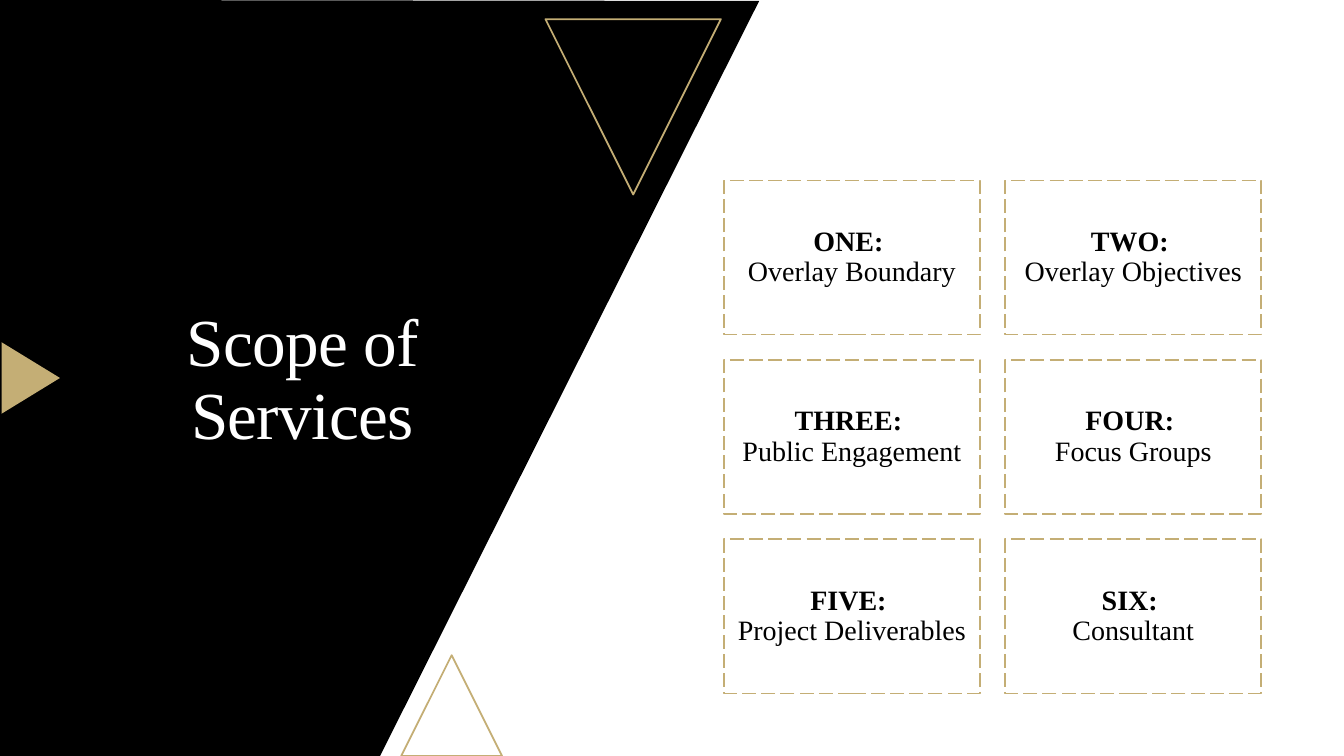
from dataclasses import dataclass

from pptx import Presentation
from pptx.dml.color import RGBColor
from pptx.enum.dml import MSO_LINE
from pptx.enum.shapes import MSO_SHAPE
from pptx.enum.text import MSO_ANCHOR, MSO_AUTO_SIZE, PP_ALIGN
from pptx.util import Emu, Pt

TRIANGLE = MSO_SHAPE.ISOSCELES_TRIANGLE
RECTANGLE = MSO_SHAPE.RECTANGLE
LONG_DASH = MSO_LINE.LONG_DASH
MIDDLE = MSO_ANCHOR.MIDDLE
CENTER = PP_ALIGN.CENTER
NO_AUTOFIT = MSO_AUTO_SIZE.NONE

PX = 9144  # 100 px to the inch
TITLE_ONLY = 5

SERVICES = [
    ("ONE: ", "Overlay Boundary"),
    ("TWO: ", "Overlay Objectives"),
    ("THREE: ", "Public Engagement"),
    ("FOUR: ", "Focus Groups"),
    ("FIVE: ", "Project Deliverables"),
    ("SIX: ", "Consultant"),
]


@dataclass(frozen=True)
class Theme:
    black: RGBColor = RGBColor(0x00, 0x00, 0x00)
    white: RGBColor = RGBColor(0xFF, 0xFF, 0xFF)
    gold: RGBColor = RGBColor(0xC4, 0xAE, 0x75)
    font: str = "Times New Roman"
    title_size: Pt = Pt(48)
    card_size: Pt = Pt(20)
    outline: Pt = Pt(1.25)


THEME = Theme()


def px(length):
    return Emu(length * PX)


def style_run(run, size, color, bold=False):
    run.font.name = THEME.font
    run.font.size = size
    run.font.color.rgb = color
    run.font.bold = bold


def set_margins(frame, margin):
    frame.margin_left = frame.margin_right = px(margin)
    frame.margin_top = frame.margin_bottom = px(margin)


def add_panel(slide, points):
    """Solid black panel with a slanted right edge."""
    builder = slide.shapes.build_freeform(*points[0], scale=PX)
    builder.add_line_segments(points[1:], close=True)
    panel = builder.convert_to_shape()
    panel.shadow.inherit = False
    panel.fill.solid()
    panel.fill.fore_color.rgb = THEME.black
    panel.line.fill.background()


def add_gold_shape(slide, kind, box, rotation=0, filled=False, dash=None):
    """Gold shape, either filled or outlined."""
    shape = slide.shapes.add_shape(kind, *map(px, box))
    shape.shadow.inherit = False
    shape.rotation = rotation
    if filled:
        shape.fill.solid()
        shape.fill.fore_color.rgb = THEME.gold
        shape.line.fill.background()
    else:
        shape.fill.background()
        shape.line.color.rgb = THEME.gold
        shape.line.width = THEME.outline
        shape.line.dash_style = dash
    return shape


def add_card(slide, box, number, service):
    """Dashed card with a bold number above the service."""
    card = add_gold_shape(slide, RECTANGLE, box, dash=LONG_DASH)
    frame = card.text_frame
    frame.word_wrap = True
    frame.vertical_anchor = MIDDLE
    set_margins(frame, 8)
    frame.text = f"{number}\v{service}"
    paragraph = frame.paragraphs[0]
    paragraph.alignment = CENTER
    paragraph.line_spacing = 0.9
    number_run, service_run = paragraph.runs
    style_run(number_run, THEME.card_size, THEME.black, bold=True)
    style_run(service_run, THEME.card_size, THEME.black)


def add_service_grid(slide):
    left, top, width, height = 718, 179, 254, 153
    column_step, row_step = 279, 178
    for index, (number, service) in enumerate(SERVICES):
        row, column = divmod(index, 2)
        box = (left + column * column_step, top + row * row_step, width, height)
        add_card(slide, box, number, service)


def place_title(slide, text, box):
    title = slide.shapes.title
    title.left, title.top, title.width, title.height = map(px, box)
    frame = title.text_frame
    frame.text = text
    frame.word_wrap = True
    frame.auto_size = NO_AUTOFIT
    frame.vertical_anchor = MIDDLE
    set_margins(frame, 20)
    paragraph = frame.paragraphs[0]
    paragraph.alignment = CENTER
    paragraph.line_spacing = 0.9
    run = paragraph.runs[0]
    style_run(run, THEME.title_size, THEME.white)
    run.font._element.set("spc", "-50")  # letter spacing
    # Bring the title in front of the panel
    element = title._element
    element.getparent().append(element)


def main():
    deck = Presentation()
    deck.slide_width, deck.slide_height = px(1333), px(750)
    slide = deck.slides.add_slide(deck.slide_layouts[TITLE_ONLY])
    slide.background.fill.solid()
    slide.background.fill.fore_color.rgb = THEME.white

    # Panel and triangles
    add_panel(slide, [(0, 0), (753, 1), (377, 750), (0, 750)])
    add_gold_shape(slide, TRIANGLE, (398, 650, 100, 100))
    add_gold_shape(slide, TRIANGLE, (541, 19, 174, 174), rotation=180)
    add_gold_shape(slide, TRIANGLE, (-5, 346, 71, 58), rotation=90, filled=True)

    # Services and title
    add_service_grid(slide)
    place_title(slide, "Scope of Services", (60, 214, 480, 328))

    deck.save("out.pptx")


if __name__ == "__main__":
    main()
